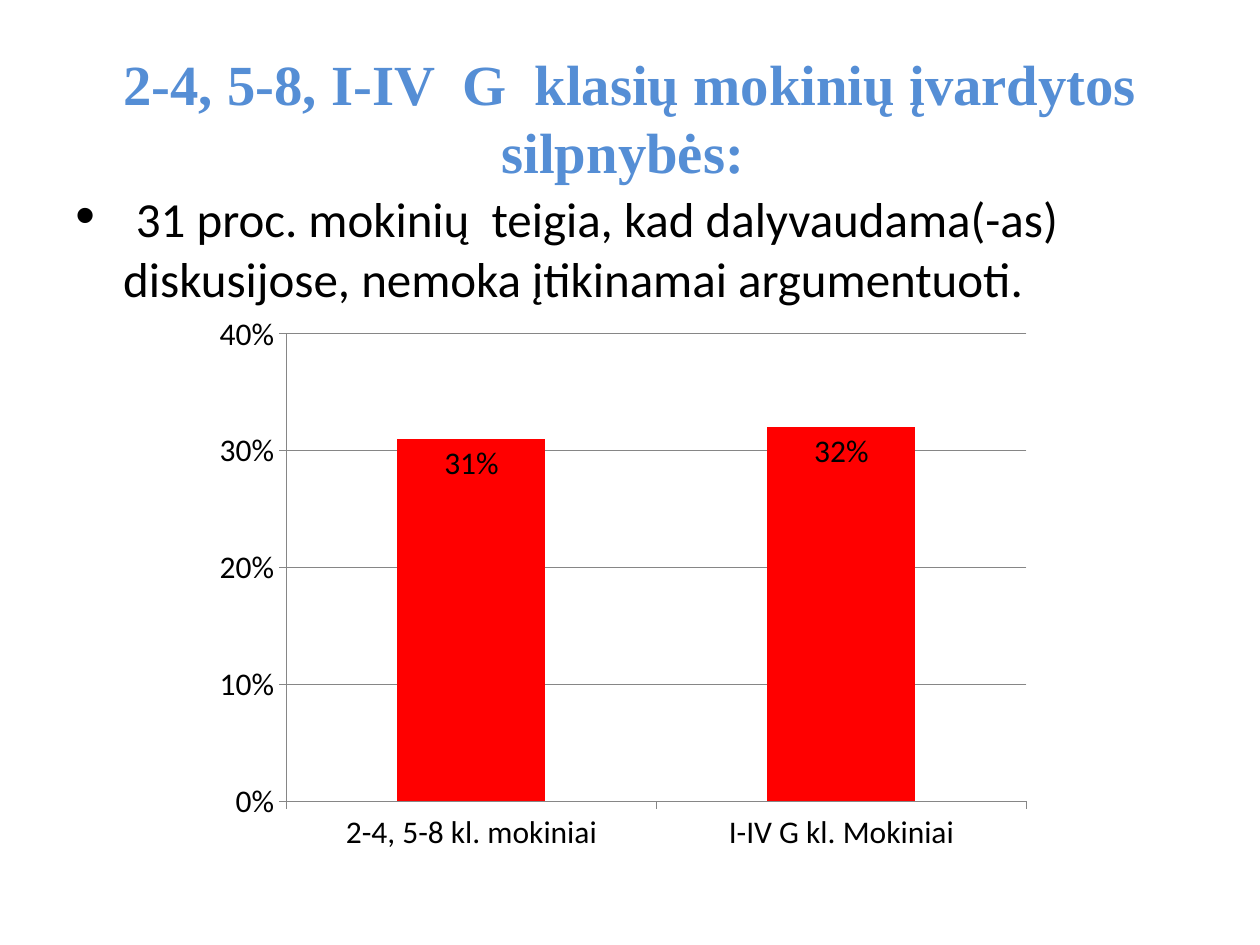
"""Build a slide with a heading, one bullet and a column chart of weaknesses."""
from dataclasses import dataclass

from lxml.etree import SubElement
from pptx import Presentation
from pptx.chart.data import CategoryChartData as ChartData
from pptx.dml.color import RGBColor as Color
from pptx.enum.chart import XL_CHART_TYPE as Kind, XL_LABEL_POSITION as Spot
from pptx.enum.chart import XL_TICK_MARK as Tick
from pptx.enum.text import MSO_ANCHOR as Anchor, PP_ALIGN as Align
from pptx.oxml.ns import qn
from pptx.util import Inches, Pt


@dataclass(frozen=True)
class Theme:
    head: str = "Times New Roman"
    body: str = "Calibri"
    blue: Color = Color(0x55, 0x8E, 0xD5)
    black: Color = Color(0, 0, 0)
    red: Color = Color(0xFF, 0, 0)
    gray: Color = Color(0x86, 0x86, 0x86)
    title: float = 32.4
    lead: float = 32
    text: float = 28
    label: float = 18


@dataclass(frozen=True)
class Box:
    left: float
    top: float
    width: float
    height: float

    def place(self) -> tuple:
        return tuple(map(Inches, (self.left, self.top, self.width, self.height)))


@dataclass(frozen=True)
class Bar:
    name: str
    share: float


THEME = Theme()
BARS = (Bar("2-4, 5-8 kl. mokiniai", 0.31), Bar("I-IV G kl. Mokiniai", 0.32))


def style(font, face: str, size: float, color: Color, bold: bool = False) -> None:
    font.name, font.size, font.bold = face, Pt(size), bold
    font.color.rgb = color


def add_text(slide, box: Box, anchor: Anchor):
    frame = slide.shapes.add_textbox(*box.place()).text_frame
    frame.word_wrap = True
    frame.vertical_anchor = anchor
    return frame.paragraphs[0]


def add_title(slide, box: Box, text: str) -> None:
    para = add_text(slide, box, Anchor.MIDDLE)
    para.text = text
    para.alignment = Align.CENTER
    style(para.runs[0].font, THEME.head, THEME.title, THEME.blue, True)


def add_point(slide, box: Box, text: str) -> None:
    para = add_text(slide, box, Anchor.TOP)
    para.space_before = Pt(6.4)
    for part, size in (("\N{NO-BREAK SPACE}", THEME.lead), (text, THEME.text)):
        run = para.add_run()
        run.text = part
        style(run.font, THEME.body, size, THEME.black)
    props = para._p.get_or_add_pPr()
    indent = Inches(0.38)
    props.set("marL", str(indent))
    props.set("indent", str(-indent))
    SubElement(props, qn("a:buFont"), typeface="Arial")
    SubElement(props, qn("a:buChar"), char="•")


def add_bars(slide, box: Box, bars: tuple[Bar, ...]) -> None:
    data = ChartData(number_format="0%")
    data.categories = [bar.name for bar in bars]
    data.add_series("Series 1", [bar.share for bar in bars])
    frame = slide.shapes.add_chart(Kind.COLUMN_CLUSTERED, *box.place(), data)
    chart = frame.chart
    chart.has_legend = chart.has_title = False
    style(chart.font, THEME.body, THEME.label, THEME.black)

    axis = chart.value_axis
    axis.minimum_scale, axis.maximum_scale, axis.major_unit = 0, 0.4, 0.1
    axis.has_major_gridlines = True
    axis.tick_labels.number_format = "0%"
    axis.tick_labels.number_format_is_linked = False
    for part in (axis, chart.category_axis):
        part.major_tick_mark = Tick.OUTSIDE
    for part in (axis, chart.category_axis, axis.major_gridlines):
        part.format.line.color.rgb = THEME.gray

    plot = chart.plots[0]
    plot.gap_width = 150
    plot.vary_by_categories = False
    fill = plot.series[0].format.fill
    fill.solid()
    fill.fore_color.rgb = THEME.red
    plot.has_data_labels = True
    labels = plot.data_labels
    labels.show_value = True
    labels.position = Spot.INSIDE_END
    labels.number_format = "0%"
    labels.number_format_is_linked = False
    style(labels.font, THEME.body, THEME.label, THEME.black)


def main() -> None:
    deck = Presentation()
    deck.slide_width, deck.slide_height = Inches(10), Inches(7.5)
    slide = deck.slides.add_slide(deck.slide_layouts[6])
    add_title(slide, Box(0.5, 0.3, 9, 1.25),
              "2-4, 5-8, I-IV  G  klasių mokinių įvardytos silpnybės: ")
    add_point(slide, Box(0.5, 1.39, 9.07, 5.75),
              "31 proc. mokinių  teigia, kad dalyvaudama(-as) diskusijose, "
              "nemoka įtikinamai argumentuoti.")
    add_bars(slide, Box(1.61, 2.41, 6.67, 4.44), BARS)
    deck.save("out.pptx")


if __name__ == "__main__":
    main()
